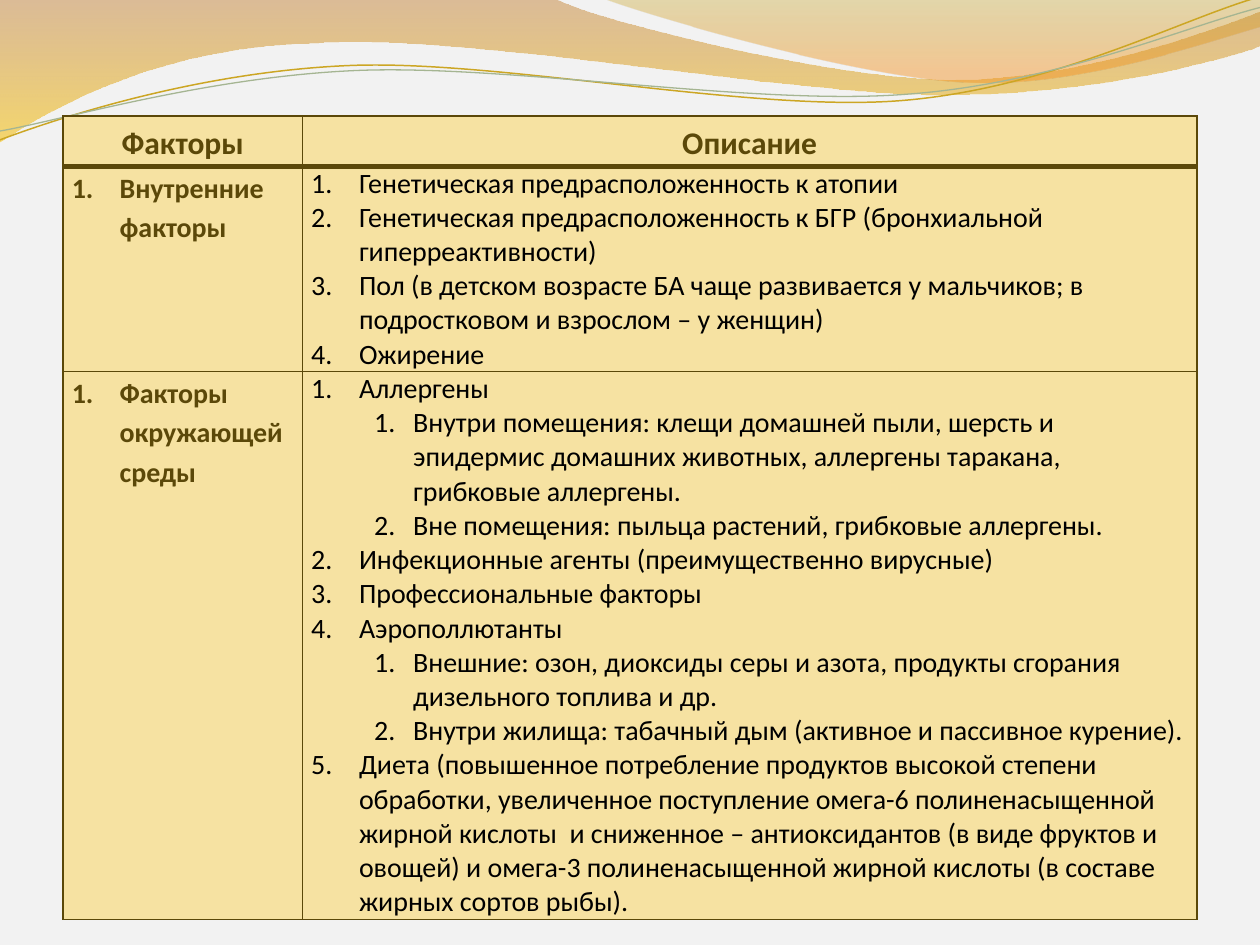
from math import cos, radians, sin

from lxml import etree
from pptx import Presentation
from pptx.dml.color import RGBColor
from pptx.enum.text import MSO_ANCHOR, PP_ALIGN
from pptx.oxml.ns import qn
from pptx.util import Inches, Pt

COLORS = {
    "back": "F2F2F2", "cell": "F6E2A2", "brown": "5B4809", "text": "000000",
    "copper": "C07A28", "yellow": "F7BF00", "olive": "C09709",
    "orange": "F59320", "gold": "CCA624", "sage": "A5B592",
}
TILT = 2.7


def color(name):
    return RGBColor.from_string(COLORS[name])


def add_wave(page, start, segments, closed, center=(0, 0), tilt=0):
    numbers = [*start, *(value for segment in segments for value in segment)]
    turn = radians(tilt)
    corners = []
    for x, y in zip(numbers[::2], numbers[1::2]):
        dx, dy = x - center[0], y - center[1]
        corners.append((Inches(center[0] + dx * cos(turn) - dy * sin(turn)),
                        Inches(center[1] + dx * sin(turn) + dy * cos(turn))))
    builder = page.shapes.build_freeform(*corners[0])
    builder.add_line_segments(corners[1:], close=closed)
    wave = builder.convert_to_shape()
    wave.rotation = -tilt % 360
    wave.shadow.inherit = False
    edges = iter(list(wave._element.spPr.iter(qn("a:lnTo"))))
    for segment in segments:
        edge = next(edges)
        if len(segment) == 6:
            edge.tag = qn("a:cubicBezTo")
            for extra in (next(edges), next(edges)):
                edge.append(extra[0])
                extra.getparent().remove(extra)
    return wave


deck = Presentation()
deck.slide_width, deck.slide_height = Inches(10), Inches(7.5)
page = deck.slides.add_slide(deck.slide_layouts[6])
page.background.fill.solid()
page.background.fill.fore_color.rgb = color("back")

bands = [
    ((0, 0), [(4.4, -0.01), (4.76, 0.17, 6.64, 0.63, 7.58, 0.63),
              (8.53, 0.63, 9.58, 0.26, 10, 0.09), (10.01, 0.36),
              (9.83, 0.44, 8.7, 0.76, 7.46, 0.75),
              (6.22, 0.75, 3.82, 0.28, 2.57, 0.34),
              (1.29, 0.36, 0.46, 0.83, -0.01, 1.13)],
     [(0, "copper", 45), (1, "yellow", 55)]),
    ((4.79, -0.01), [(5.09, 0.11, 6.82, 0.62, 7.69, 0.65),
                     (8.56, 0.69, 9.61, 0.32, 10, 0.21), (10, 0)],
     [(0, "olive", 30), (0.8, "orange", 45)]),
]
for start, segments, stops in bands:
    band = add_wave(page, start, segments, True)
    band.line.fill.background()
    band.fill.gradient()
    band.fill.gradient_angle = 270
    for stop, (position, name, opacity) in zip(band.fill.gradient_stops, stops):
        stop.position = position
        stop.color.rgb = color(name)
    for tone, (position, name, opacity) in zip(band._element.spPr.iter(qn("a:srgbClr")), stops):
        etree.SubElement(tone, qn("a:alpha"), val=str(opacity * 1000))

strands = [
    ((0, 1.11), [(0.48, 0.93, 1.58, 0.57, 2.77, 0.52),
                 (3.95, 0.47, 5.93, 0.89, 7.13, 0.8),
                 (8.33, 0.71, 9.38, 0.15, 9.98, -0.02)], (4.99, 0.58), "gold", 0.85),
    ((0, 1.04), [(0.47, 0.96, 1.64, 0.61, 2.83, 0.56),
                 (4.03, 0.51, 5.97, 0.84, 7.17, 0.75),
                 (8.36, 0.67, 9.41, 0.21, 10, 0.06)], (5, 0.59), "sage", 0.75),
]
for start, segments, center, name, width in strands:
    strand = add_wave(page, start, segments, False, center, TILT)
    strand.fill.background()
    strand.line.color.rgb = color(name)
    strand.line.width = Pt(width)

rows = [
    [[(0, "Факторы")], [(0, "Описание")]],
    [[(0, "Внутренние факторы")],
     [(0, "Генетическая предрасположенность к атопии"),
      (0, "Генетическая предрасположенность к БГР (бронхиальной гиперреактивности)"),
      (0, "Пол (в детском возрасте БА чаще развивается у мальчиков; в подростковом и взрослом – у женщин)"),
      (0, "Ожирение")]],
    [[(0, "Факторы окружающей среды")],
     [(0, "Аллергены"),
      (1, "Внутри помещения: клещи домашней пыли, шерсть и эпидермис домашних животных, "
          "аллергены таракана, грибковые аллергены."),
      (1, "Вне помещения: пыльца растений, грибковые аллергены."),
      (0, "Инфекционные агенты (преимущественно вирусные)"),
      (0, "Профессиональные факторы"),
      (0, "Аэрополлютанты"),
      (1, "Внешние: озон, диоксиды серы и азота, продукты сгорания дизельного топлива и др."),
      (1, "Внутри жилища: табачный дым (активное и пассивное курение)."),
      (0, "Диета (повышенное потребление продуктов высокой степени обработки, увеличенное "
          "поступление омега-6 полиненасыщенной жирной кислоты  и сниженное – антиоксидантов "
          "(в виде фруктов и овощей) и омега-3 полиненасыщенной жирной кислоты (в составе "
          "жирных сортов рыбы).")]],
]
indents = [(0.38, -0.38), (0.81, -0.31)]

frame = page.shapes.add_table(3, 2, Inches(0.5), Inches(0.92), Inches(9), Inches(6.27))
table = frame.table
table.first_row = table.horz_banding = False
for column, width in zip(table.columns, (1.9, 7.1)):
    column.width = Inches(width)
for row, height in zip(table.rows, (0.4, 1.44, 3.94)):
    row.height = Inches(height)
frame.height = Inches(6.27)

for r, row in enumerate(rows):
    for c, items in enumerate(row):
        cell = table.cell(r, c)
        header = r == 0
        strong = header or c == 0
        cell.margin_left = cell.margin_right = Inches(0.07)
        cell.margin_top = cell.margin_bottom = 0
        cell.vertical_anchor = MSO_ANCHOR.MIDDLE if header else MSO_ANCHOR.TOP
        borders = cell._tc.get_or_add_tcPr()
        for side in ("lnL", "lnR", "lnT", "lnB"):
            thick = (r, side) in ((0, "lnB"), (1, "lnT"))
            edge = etree.SubElement(borders, qn("a:" + side), w=str(Pt(3 if thick else 1)))
            paint = etree.SubElement(edge, qn("a:solidFill"))
            etree.SubElement(paint, qn("a:srgbClr"), val=COLORS["brown"])
        cell.fill.solid()
        cell.fill.fore_color.rgb = color("cell")

        cell.text_frame.text = "\n".join(text for level, text in items)
        for para, (level, text) in zip(cell.text_frame.paragraphs, items):
            para.level = level
            if strong:
                para.line_spacing = 1.15
            if header:
                para.alignment = PP_ALIGN.CENTER
            else:
                props = para._p.get_or_add_pPr()
                left, hanging = indents[level]
                props.set("marL", str(Inches(left)))
                props.set("indent", str(Inches(hanging)))
                etree.SubElement(props, qn("a:buFont"), typeface="+mj-lt")
                etree.SubElement(props, qn("a:buAutoNum"), type="arabicPeriod")
            for span in para.runs:
                span.font.name = "Calibri"
                span.font.size = Pt(18 if header else 16)
                span.font.bold = strong
                span.font.color.rgb = color("brown" if strong else "text")

deck.save("out.pptx")
